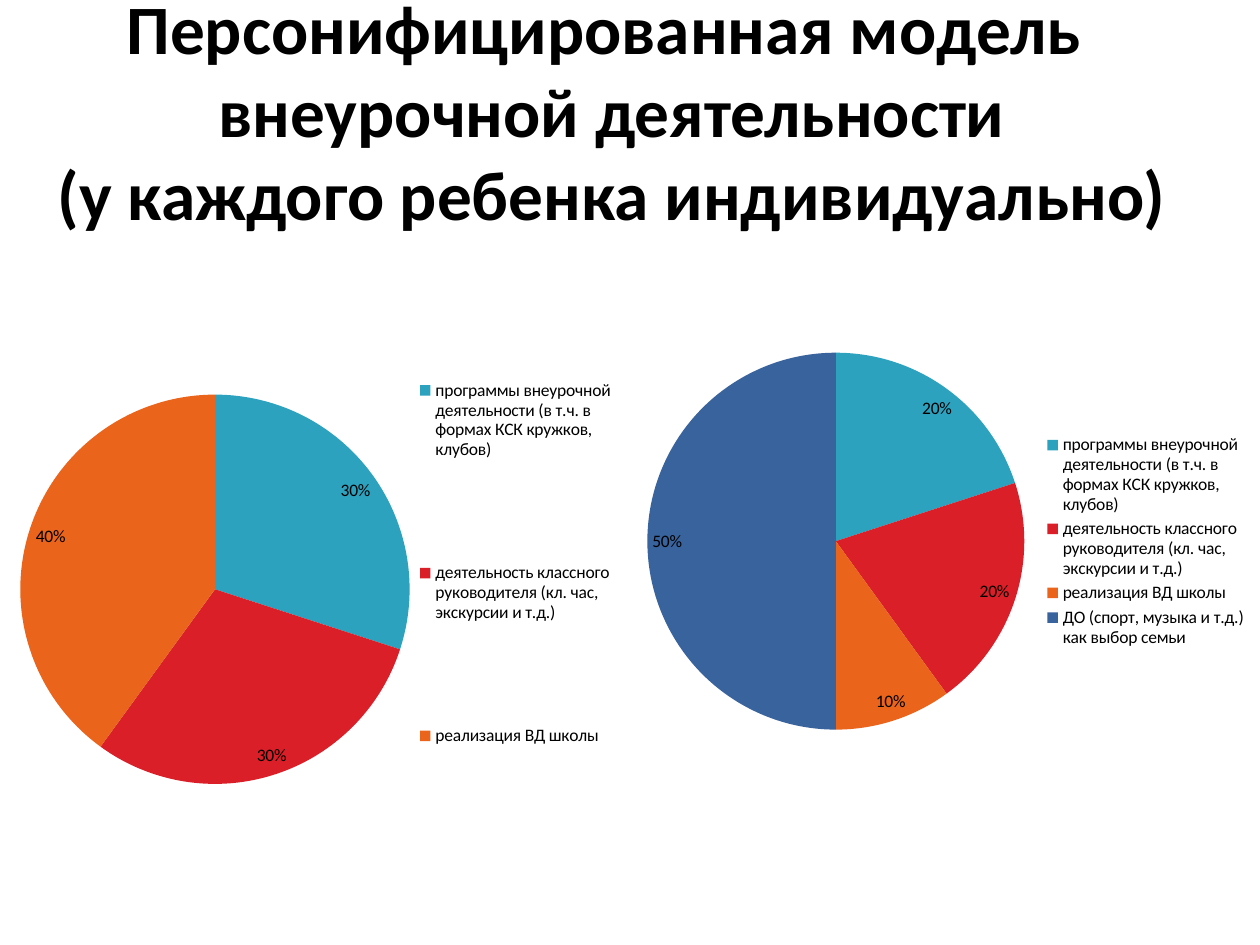
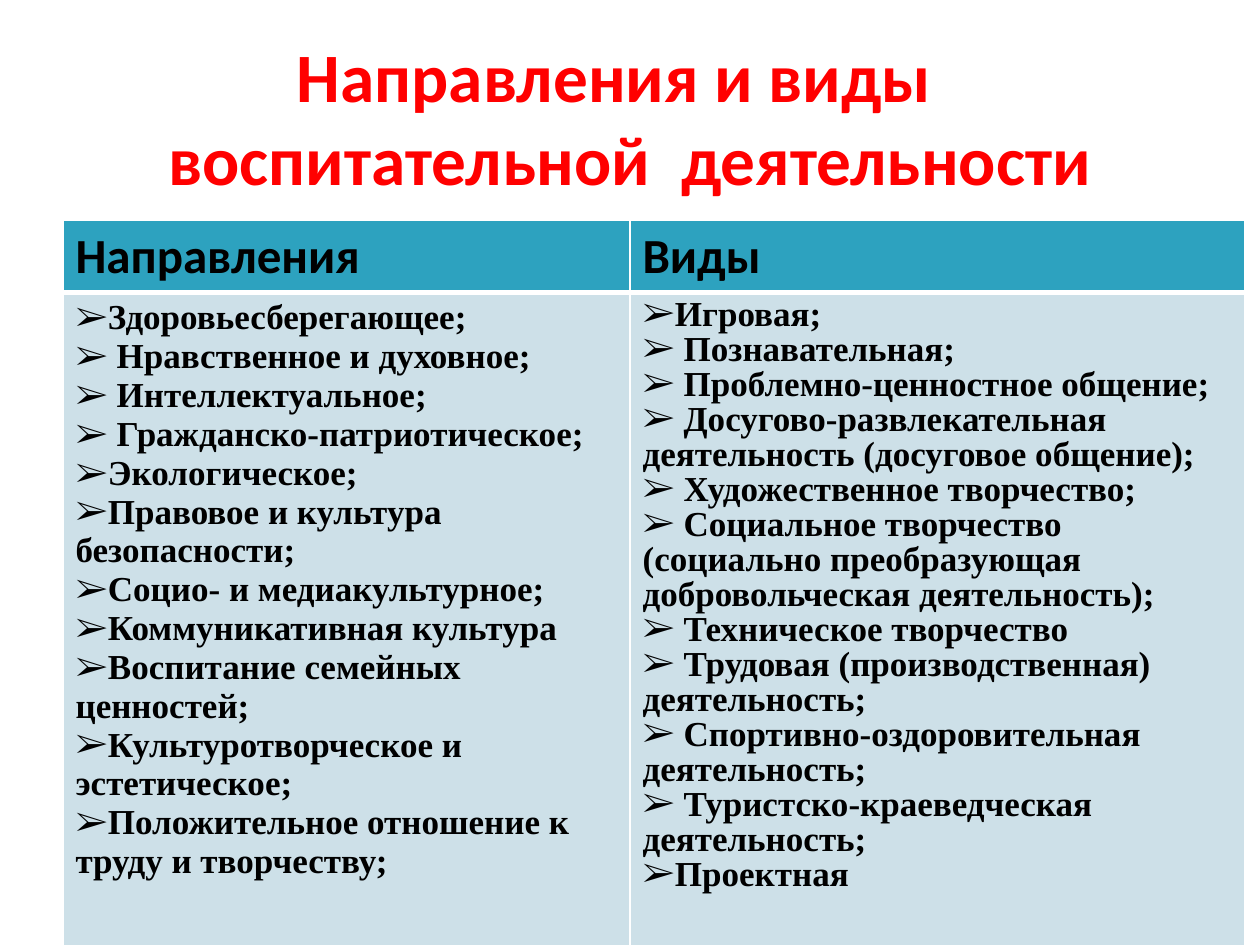
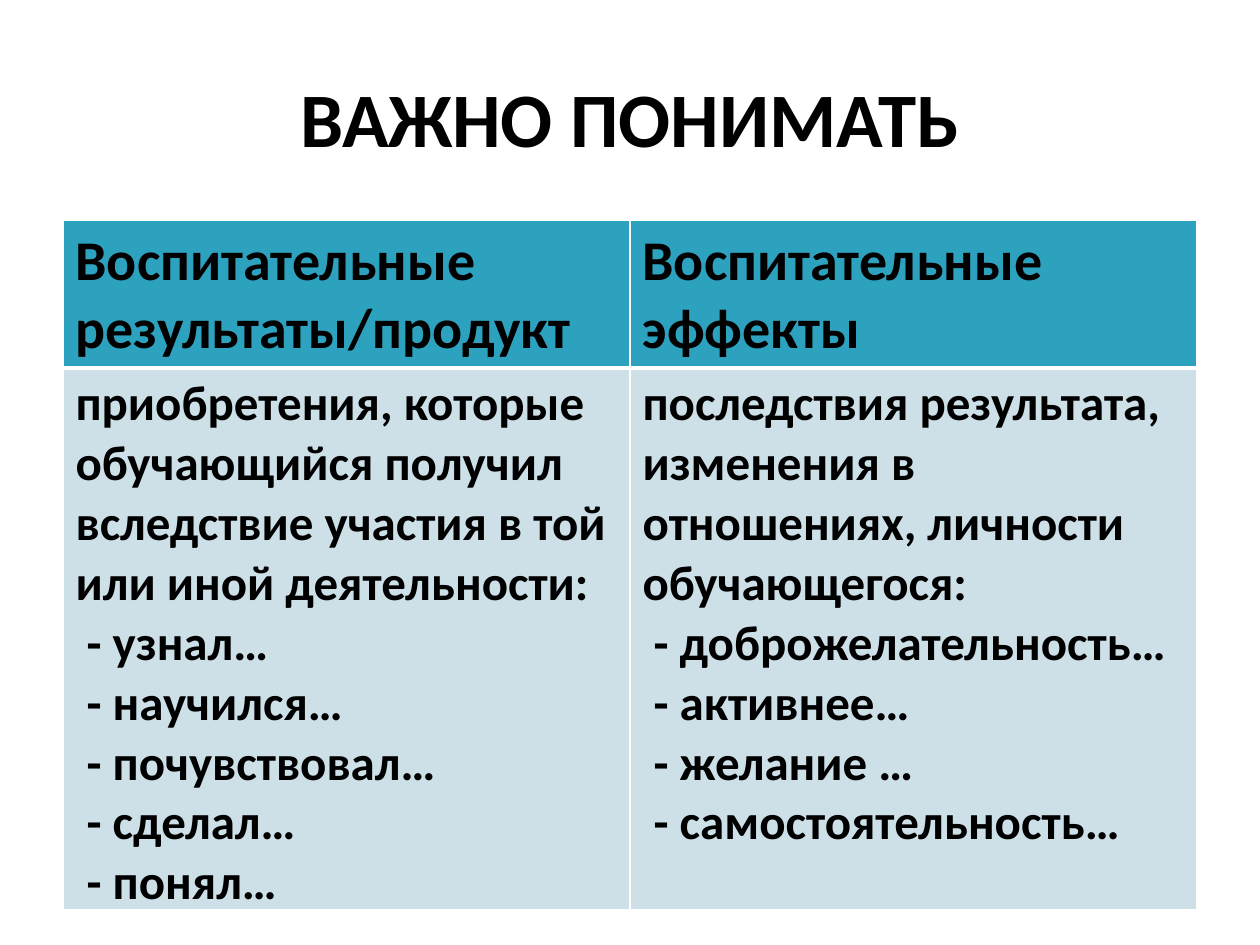
from dataclasses import dataclass

import pptx
import pptx.chart.data
import pptx.dml.color
import pptx.enum.chart
import pptx.enum.text
import pptx.oxml
import pptx.oxml.ns
import pptx.slide
import pptx.table
import pptx.util
from lxml import etree
from pptx.util import Cm

COLORS = {
    "text": "000000",
    "accent": "FF0000",
    "teal": "2DA2BF",
    "red": "DA1F28",
    "orange": "EB641B",
    "blue": "39639D",
    "body": "CDE0E8",
    "border": "FFFFFF",
}
PIE_COLORS = ("teal", "red", "orange", "blue")
FONT = "Calibri"
SERIF = "Times New Roman"
BULLET = "➢"
BLANK_LAYOUT = 6
MINIMUM_ROW_HEIGHT = 1.03  # rows grow to fit their text

CATEGORIES = (
    "программы внеурочной деятельности (в т.ч. в формах КСК кружков, клубов)",
    "деятельность классного руководителя (кл. час, экскурсии и т.д.)",
    "реализация ВД школы",
    "ДО (спорт, музыка и т.д.) как выбор семьи",
)


@dataclass(frozen=True)
class Box:
    left: float
    top: float
    width: float
    height: float

    def lengths(self) -> tuple[Cm, Cm, Cm, Cm]:
        return Cm(self.left), Cm(self.top), Cm(self.width), Cm(self.height)


@dataclass(frozen=True)
class Title:
    text: str
    size: float = 39.6
    color: str = "text"
    box: Box = Box(1.27, 0.76, 22.86, 3.18)


@dataclass(frozen=True)
class Pie:
    box: Box
    values: tuple[float, ...]
    legend_area: Box | None = None  # shares of the chart size


@dataclass(frozen=True)
class Column:
    heading: str
    lines: tuple[str, ...]
    width: float = 11.43
    line_spacing: float | None = None


@dataclass(frozen=True)
class TwoColumnTable:
    columns: tuple[Column, Column]
    height: float
    heading_size: int
    body_size: int
    body_font: str = FONT
    bulleted: bool = False


def rgb(name: str) -> pptx.dml.color.RGBColor:
    return pptx.dml.color.RGBColor.from_string(COLORS[name])


def style_font(font, size: float, color: str = "text", name: str = FONT, bold: bool = True) -> None:
    font.size = pptx.util.Pt(size)
    font.name = name
    font.bold = bold
    font.color.rgb = rgb(color)


def add_title(slide: pptx.slide.Slide, title: Title) -> None:
    frame = slide.shapes.add_textbox(*title.box.lengths()).text_frame
    frame.word_wrap = True
    frame.vertical_anchor = pptx.enum.text.MSO_ANCHOR.MIDDLE
    paragraph = frame.paragraphs[0]
    paragraph.text = title.text
    paragraph.alignment = pptx.enum.text.PP_ALIGN.CENTER
    style_font(paragraph.font, title.size, title.color)


# Charts
def place_legend(legend, area: Box) -> None:
    layout = pptx.oxml.parse_xml(
        f'<c:layout {pptx.oxml.ns.nsdecls("c")}><c:manualLayout>'
        '<c:xMode val="edge"/><c:yMode val="edge"/>'
        f'<c:x val="{area.left}"/><c:y val="{area.top}"/>'
        f'<c:w val="{area.width}"/><c:h val="{area.height}"/>'
        "</c:manualLayout></c:layout>"
    )
    element = legend._element
    for old in element.findall(pptx.oxml.ns.qn("c:layout")):
        element.remove(old)
    element.find(pptx.oxml.ns.qn("c:legendPos")).addnext(layout)


def add_pie(slide: pptx.slide.Slide, pie: Pie) -> None:
    data = pptx.chart.data.CategoryChartData(number_format="0%")
    data.categories = CATEGORIES[:len(pie.values)]
    data.add_series("Series 1", pie.values)
    chart = slide.shapes.add_chart(
        pptx.enum.chart.XL_CHART_TYPE.PIE, *pie.box.lengths(), data
    ).chart
    chart.has_title = False
    style_font(chart.font, 10, bold=False)

    chart.has_legend = True
    chart.legend.position = pptx.enum.chart.XL_LEGEND_POSITION.RIGHT
    chart.legend.include_in_layout = False
    if pie.legend_area:
        place_legend(chart.legend, pie.legend_area)

    plot = chart.plots[0]
    plot.vary_by_categories = True
    for index, color in enumerate(PIE_COLORS[:len(pie.values)]):
        fill = plot.series[0].points[index].format.fill
        fill.solid()
        fill.fore_color.rgb = rgb(color)

    plot.has_data_labels = True
    labels = plot.data_labels
    labels.show_value = True
    labels.show_percentage = False
    labels.number_format = "0%"
    labels.number_format_is_linked = False
    labels.position = pptx.enum.chart.XL_LABEL_POSITION.BEST_FIT


# Tables
def set_borders(cell: pptx.table._Cell, top: float, bottom: float) -> None:
    properties = cell._tc.get_or_add_tcPr()
    for side, width in (("L", 1), ("R", 1), ("T", top), ("B", bottom)):
        properties.append(pptx.oxml.parse_xml(
            f'<a:ln{side} {pptx.oxml.ns.nsdecls("a")} w="{pptx.util.Pt(width)}">'
            f'<a:solidFill><a:srgbClr val="{COLORS["border"]}"/></a:solidFill></a:ln{side}>'
        ))


def add_bullet(paragraph, font: str) -> None:
    properties = paragraph._p.get_or_add_pPr()
    properties.set("marL", "0")
    properties.set("indent", "0")
    for tag, attribute, value in (("a:buFont", "typeface", font), ("a:buChar", "char", BULLET)):
        etree.SubElement(properties, pptx.oxml.ns.qn(tag)).set(attribute, value)


def fill_cell(cell: pptx.table._Cell, lines: tuple[str, ...], color: str, size: int,
              font: str = FONT, bulleted: bool = False, spacing: float | None = None) -> None:
    cell.fill.solid()
    cell.fill.fore_color.rgb = rgb(color)
    cell.text = "\n".join(lines)
    for paragraph in cell.text_frame.paragraphs:
        paragraph.line_spacing = spacing
        if bulleted:
            add_bullet(paragraph, font)
        style_font(paragraph.font, size, name=font)


def add_two_column_table(slide: pptx.slide.Slide, content: TwoColumnTable) -> None:
    box = Box(1.27, 4.45, sum(column.width for column in content.columns), content.height)
    shape = slide.shapes.add_table(2, 2, *box.lengths())
    table = shape.table
    for row in table.rows:
        row.height = Cm(MINIMUM_ROW_HEIGHT)
    for index, column in enumerate(content.columns):
        table.columns[index].width = Cm(column.width)
        heading, body = table.cell(0, index), table.cell(1, index)
        set_borders(heading, top=1, bottom=3)
        set_borders(body, top=3, bottom=1)
        fill_cell(heading, (column.heading,), "teal", content.heading_size)
        fill_cell(body, column.lines, "body", content.body_size, content.body_font,
                  content.bulleted, column.line_spacing)
    shape.height = Cm(content.height)


# Slide content
MODEL_TITLE = Title(
    "Персонифицированная модель  внеурочной деятельности\n(у каждого ребенка индивидуально)",
    box=Box(0.51, 0.33, 23.65, 3.78),
)
MODEL_PIES = (
    Pie(Box(0.06, 3.13, 12.83, 17.5), (0.3, 0.3, 0.4), Box(0.64, 0.14, 0.33, 0.66)),
    Pie(Box(12.7, 0.99, 12.7, 19.84), (0.2, 0.2, 0.1, 0.5)),
)

DIRECTIONS_TITLE = Title("Направления и виды  \nвоспитательной  деятельности", color="accent")
DIRECTIONS_TABLE = TwoColumnTable(
    columns=(
        Column("Направления", (
            "Здоровьесберегающее;",
            " Нравственное и духовное;",
            " Интеллектуальное;",
            " Гражданско-патриотическое;",
            "Экологическое;",
            "Правовое и культура безопасности;",
            "Социо- и медиакультурное;",
            "Коммуникативная культура",
            "Воспитание семейных ценностей;",
            "Культуротворческое и эстетическое;",
            "Положительное отношение к труду и творчеству;",
        )),
        Column("Виды", (
            "Игровая;",
            " Познавательная;",
            " Проблемно-ценностное общение;",
            " Досугово-развлекательная деятельность (досуговое общение);",
            " Художественное творчество;",
            " Социальное творчество (социально преобразующая добровольческая деятельность);",
            " Техническое творчество",
            " Трудовая (производственная) деятельность;",
            " Спортивно-оздоровительная деятельность;",
            " Туристско-краеведческая деятельность;",
            "Проектная",
        ), width=12.4, line_spacing=0.9),
    ),
    height=14.66,
    heading_size=28,
    body_size=20,
    body_font=SERIF,
    bulleted=True,
)

RESULTS_TITLE = Title("ВАЖНО ПОНИМАТЬ", size=44)
RESULTS_TABLE = TwoColumnTable(
    columns=(
        Column("Воспитательные результаты/продукт", (
            "приобретения, которые обучающийся получил вследствие участия "
            "в той или иной деятельности:",
            " - узнал…",
            " - научился…",
            " - почувствовал…",
            " - сделал…",
            " - понял…",
        )),
        Column("Воспитательные эффекты", (
            "последствия результата, изменения в отношениях, личности обучающегося:",
            " - доброжелательность…",
            " - активнее…",
            " - желание …",
            " - самостоятельность…",
        )),
    ),
    height=13.89,
    heading_size=32,
    body_size=28,
)


def main() -> None:
    presentation = pptx.Presentation()
    presentation.slide_width = Cm(25.4)
    presentation.slide_height = Cm(19.05)
    layout = presentation.slide_layouts[BLANK_LAYOUT]

    # Personal model with two pies
    slide = presentation.slides.add_slide(layout)
    add_title(slide, MODEL_TITLE)
    for pie in MODEL_PIES:
        add_pie(slide, pie)

    # Table slides
    for title, table in ((DIRECTIONS_TITLE, DIRECTIONS_TABLE), (RESULTS_TITLE, RESULTS_TABLE)):
        slide = presentation.slides.add_slide(layout)
        add_title(slide, title)
        add_two_column_table(slide, table)

    presentation.save("out.pptx")


if __name__ == "__main__":
    main()
